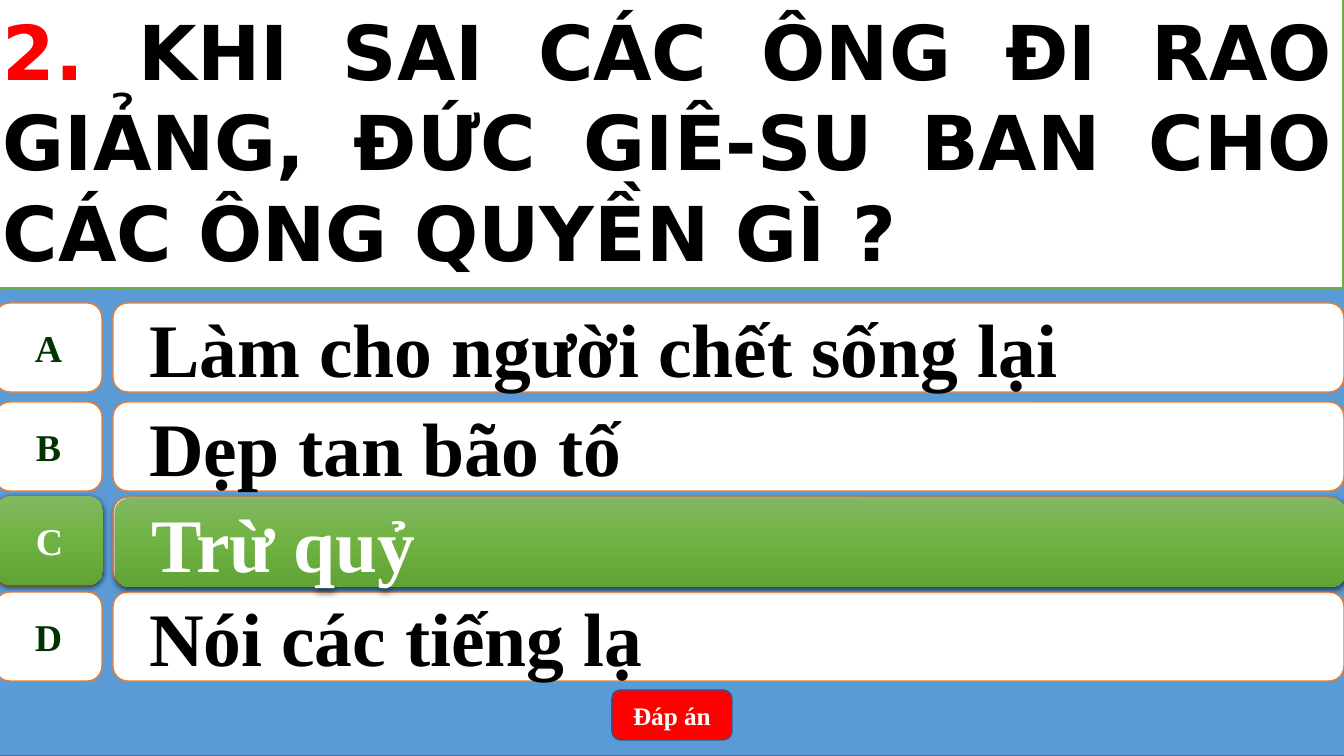
"""Build a quiz slide with one question, four answers and the correct one highlighted."""
import pptx
import pptx.dml.color
import pptx.enum.shapes
import pptx.enum.text
import pptx.oxml
import pptx.oxml.ns
import pptx.util

QUESTION = [("2. ", "number"),
            ("KHI SAI CÁC ÔNG ĐI RAO GIẢNG, ĐỨC GIÊ-SU BAN CHO CÁC ÔNG QUYỀN GÌ ?", "ink")]
ANSWERS = [
    ("A", "Làm cho người chết sống lại", 303),
    ("B", "Dẹp tan bão tố", 402),
    ("C", "Trừ quỷ", 497),
    ("D", "Nói các tiếng lạ", 592),
]
CORRECT = 2
REVEAL = "Đáp án"

THEME = {
    "backdrop": "5B9BD5", "backdrop_edge": "43739E",
    "card": "FFFFFF", "card_edge": "ED7D31",
    "button": "FF0000", "button_edge": "325491",
    "question_edge": "70AD47",
    "number": "FF0000", "ink": "000000", "letter": "003300", "light": "FFFFFF",
    "correct": [(0, "81B861"), (50, "6FB242"), (100, "62A336")],
    "serif": "Times New Roman", "sans": "DejaVu Sans",
    "large": 54, "medium": 27, "small": 18,
}

PX = 914400 / 100.8
SLIDE = (1344, 756)
ROW_HEIGHT = 89
LETTER_LEFT, LETTER_WIDTH = -5, 107
ANSWER_LEFT, ANSWER_WIDTH = 113, 1231

KINDS = pptx.enum.shapes.MSO_SHAPE
ALIGN = pptx.enum.text.PP_ALIGN


def px(length):
    return pptx.util.Emu(round(length * PX))


def color(key):
    return pptx.dml.color.RGBColor.from_string(THEME[key])


def apply(target, values):
    for key, value in values.items():
        setattr(target, key, value)


def highlight(card):
    card.fill.gradient()
    card.fill.gradient_angle = 270
    card.line.fill.background()
    namespace = pptx.oxml.ns.nsdecls("a")
    stops = "".join(f'<a:gs pos="{place * 1000}"><a:srgbClr val="{tone}"/></a:gs>'
                    for place, tone in THEME["correct"])
    properties = card.element.spPr
    gradient = properties.find(pptx.oxml.ns.qn("a:gradFill"))
    gradient.replace(gradient.find(pptx.oxml.ns.qn("a:gsLst")),
                     pptx.oxml.parse_xml(f"<a:gsLst {namespace}>{stops}</a:gsLst>"))
    properties.find(pptx.oxml.ns.qn("a:effectLst")).append(pptx.oxml.parse_xml(
        f'<a:outerShdw {namespace} blurRad="57150" dist="19050" dir="5400000" '
        'algn="ctr" rotWithShape="0"><a:srgbClr val="000000">'
        '<a:alpha val="63000"/></a:srgbClr></a:outerShdw>'))


def add_panel(slide, kind, box, fill, edge):
    panel = slide.shapes.add_shape(kind, *map(px, box))
    panel.shadow.inherit = False
    if fill == "correct":
        highlight(panel)
    else:
        panel.fill.solid()
        panel.fill.fore_color.rgb = color(fill)
        panel.line.color.rgb = color(edge)
        panel.line.width = pptx.util.Pt(1)
    return panel


def write(panel, pieces, size, align, face="serif", wrap=True):
    apply(panel.text_frame, {"word_wrap": wrap,
                             "vertical_anchor": pptx.enum.text.MSO_ANCHOR.MIDDLE})
    paragraph = panel.text_frame.paragraphs[0]
    paragraph.alignment = align
    for words, tone in pieces:
        run = paragraph.add_run()
        run.text = words
        apply(run.font, {"name": THEME[face], "size": pptx.util.Pt(THEME[size]), "bold": True})
        run.font.color.rgb = color(tone)
    return paragraph


def add_answer(slide, letter, answer, letter_at, answer_at, fill, letter_tone, answer_tone):
    badge = add_panel(slide, KINDS.FLOWCHART_ALTERNATE_PROCESS,
                      (*letter_at, LETTER_WIDTH, ROW_HEIGHT), fill, "card_edge")
    write(badge, [(letter, letter_tone)], "medium", ALIGN.CENTER, wrap=False)
    bar = add_panel(slide, KINDS.ROUNDED_RECTANGLE,
                    (*answer_at, ANSWER_WIDTH, ROW_HEIGHT), fill, "card_edge")
    paragraph = write(bar, [(answer, answer_tone)], "large", ALIGN.LEFT)
    paragraph.level = 1
    indents = paragraph._p.get_or_add_pPr()
    for key, length in {"marL": 50, "indent": -28}.items():
        indents.set(key, str(px(length)))


def main():
    deck = pptx.Presentation()
    apply(deck, {"slide_width": px(SLIDE[0]), "slide_height": px(SLIDE[1])})
    slide = deck.slides.add_slide(deck.slide_layouts[6])

    add_panel(slide, KINDS.RECTANGLE, (-5, 0, 1350, 756), "backdrop", "backdrop_edge")
    for letter, answer, top in ANSWERS:
        add_answer(slide, letter, answer, (LETTER_LEFT, top), (ANSWER_LEFT, top),
                   "card", "letter", "ink")
    button = add_panel(slide, KINDS.ROUNDED_RECTANGLE, (612, 690, 120, 50),
                       "button", "button_edge")
    write(button, [(REVEAL, "light")], "small", ALIGN.CENTER)

    letter, answer, top = ANSWERS[CORRECT]
    add_answer(slide, letter, answer, (LETTER_LEFT + 1, top - 1), (ANSWER_LEFT + 2, top + 1),
               "correct", "light", "light")

    question = add_panel(slide, KINDS.RECTANGLE, (-7, -7, 1350, 295), "card", "question_edge")
    write(question, QUESTION, "large", ALIGN.JUSTIFY, face="sans")
    deck.save("out.pptx")


if __name__ == "__main__":
    main()
